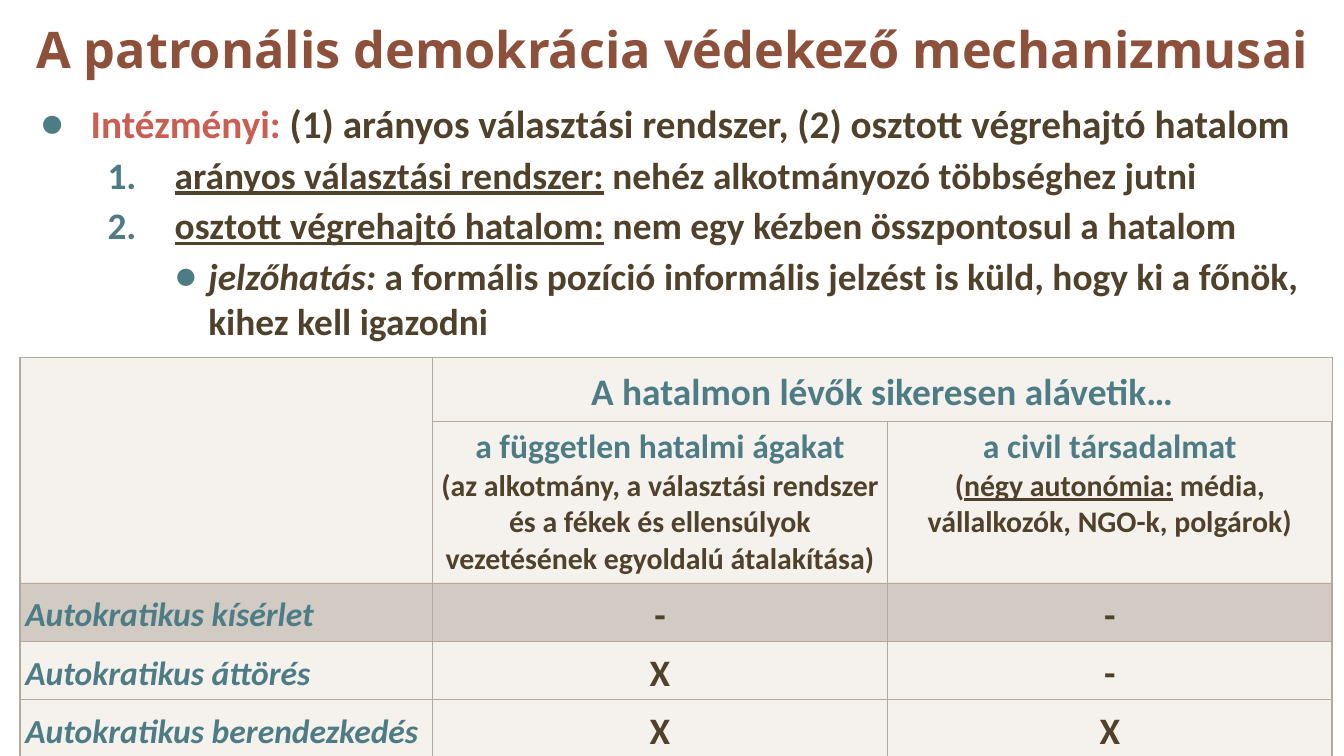
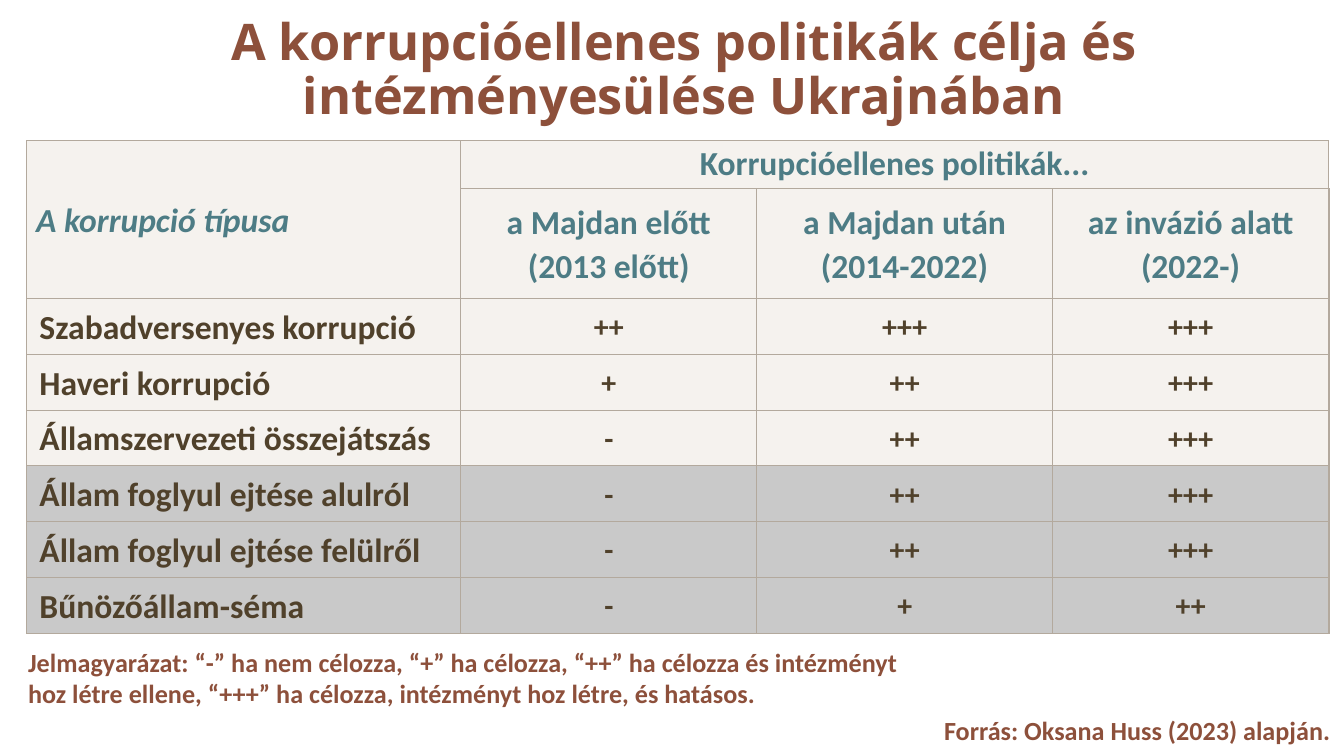
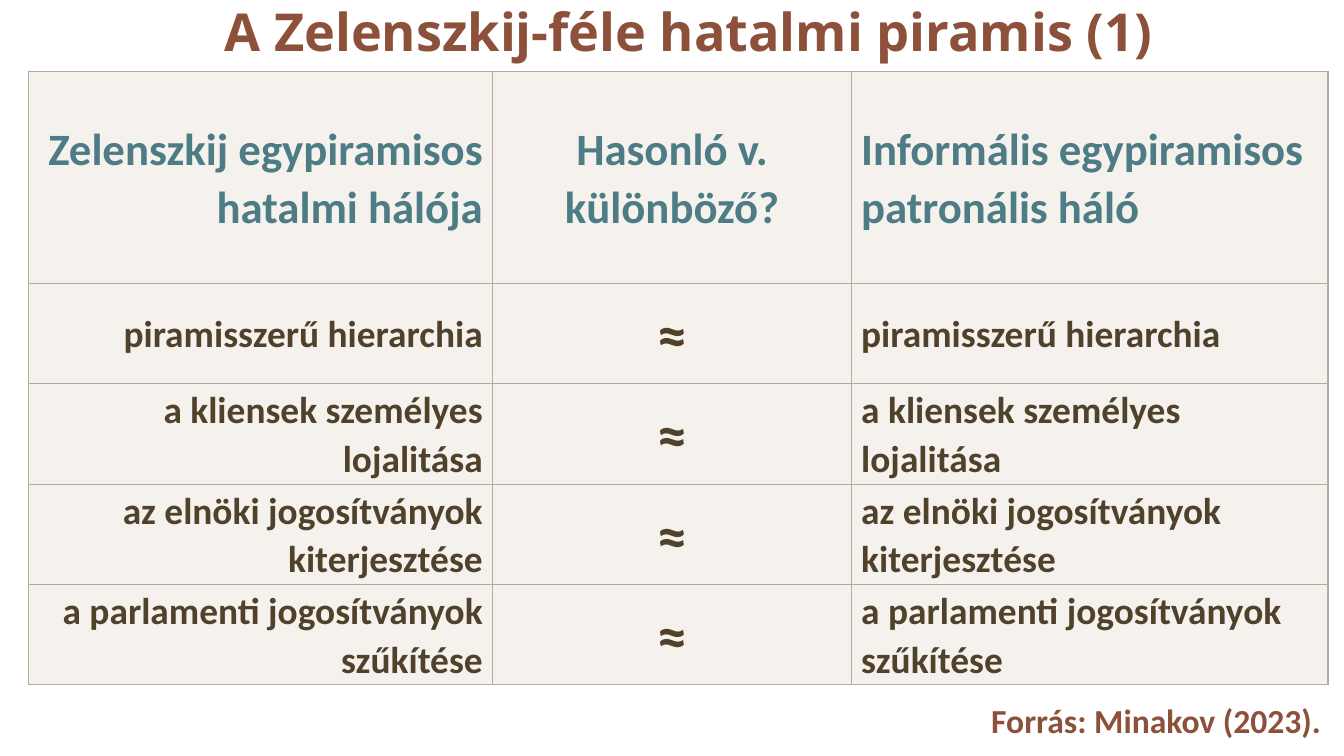
import dataclasses

import lxml.etree
import pptx
import pptx.dml.color
import pptx.enum.text
import pptx.oxml.ns
import pptx.util

Pt = pptx.util.Pt
ALIGN = pptx.enum.text.PP_ALIGN
ANCHOR = pptx.enum.text.MSO_ANCHOR
LEFT, CENTER, RIGHT = ALIGN.LEFT, ALIGN.CENTER, ALIGN.RIGHT


@dataclasses.dataclass(frozen=True)
class Theme:
    # Colours
    title: str = "8D503B"
    heading: str = "4D7C85"
    accent: str = "CA5E53"
    text: str = "50412B"
    border: str = "B3A99D"
    cell: str = "EFEAE4"
    gray: str = "A6A6A6"
    opacity: int = 60
    # Fonts and type sizes
    title_font: str = "Open Sans"
    body_font: str = "Calibri"
    title_size: int = 27
    large_title: int = 28
    lead: int = 21
    large: int = 20
    medium: int = 18
    small: int = 16
    caption: int = 14
    column_head: int = 24
    symbol: int = 32


THEME = Theme()


@dataclasses.dataclass
class Run:
    text: str
    size: float = THEME.medium
    color: str = THEME.text
    italic: bool = False
    underline: bool = False
    font: str = THEME.body_font


@dataclasses.dataclass
class Cell:
    """Paragraphs of runs with the layout of one table cell."""
    paragraphs: list
    align: int = CENTER
    anchor: int = ANCHOR.MIDDLE
    margins: tuple = (3, 3)
    line_spacing: float = 1.0


def add_element(parent, tag, **attributes):
    return lxml.etree.SubElement(parent, pptx.oxml.ns.qn(tag), attributes)


class Deck:
    def __init__(self, theme):
        self.theme = theme
        self.presentation = pptx.Presentation()
        self.presentation.slide_width = Pt(720)
        self.presentation.slide_height = Pt(405)
        self.slide = None

    def add_slide(self, title, box, size=None, layout=5):
        layouts = self.presentation.slide_layouts
        self.slide = self.presentation.slides.add_slide(layouts[layout])
        run = Run(title, size or self.theme.title_size, self.theme.title,
                  font=self.theme.title_font)
        frame = self.place(self.slide.shapes.title, box, ANCHOR.MIDDLE)
        self.add_runs(frame.paragraphs[0], [run], CENTER, 0.9)

    def place(self, shape, box, anchor=ANCHOR.TOP):
        shape.left, shape.top, shape.width, shape.height = map(Pt, box)
        frame = shape.text_frame
        frame.word_wrap = True
        frame.auto_size = pptx.enum.text.MSO_AUTO_SIZE.NONE
        frame.vertical_anchor = anchor
        return frame

    def add_runs(self, paragraph, runs, align=LEFT, line_spacing=1.0):
        paragraph.alignment = align
        paragraph.line_spacing = line_spacing
        paragraph.space_before = Pt(0)
        for item in runs:
            for index, line in enumerate(item.text.split("\n")):
                if index:
                    paragraph.add_line_break()
                run = paragraph.add_run()
                run.text = line
                font = run.font
                font.name, font.size, font.bold = item.font, Pt(item.size), True
                font.italic, font.underline = item.italic, item.underline
                font.color.rgb = pptx.dml.color.RGBColor.from_string(item.color)

    def paragraphs(self, frame, count):
        return [frame.paragraphs[0]] + [frame.add_paragraph() for _ in range(count - 1)]

    def add_list(self, box, items):
        """Each item: level, indent, hanging, number (None for a dot), runs."""
        frame = self.place(self.slide.placeholders[1], box)
        for paragraph, item in zip(self.paragraphs(frame, len(items)), items):
            level, indent, hanging, number, runs = item
            paragraph.level = level
            self.add_runs(paragraph, runs)
            paragraph.space_after = Pt(3)
            properties = paragraph._p.get_or_add_pPr()
            properties.set("marL", str(Pt(indent)))
            properties.set("indent", str(-Pt(hanging)))
            color = add_element(properties, "a:buClr")
            add_element(color, "a:srgbClr", val=self.theme.heading)
            add_element(properties, "a:buFont", typeface=self.theme.body_font)
            if number is None:
                add_element(properties, "a:buChar", char="●")
            else:
                add_element(properties, "a:buAutoNum", type="arabicPeriod", startAt=str(number))

    def add_caption(self, box, text, align=LEFT, size=None):
        frame = self.place(self.slide.shapes.add_textbox(*map(Pt, box)), box)
        run = Run(text, size or self.theme.caption, self.theme.title)
        self.add_runs(frame.paragraphs[0], [run], align)

    def add_table(self, left, top, widths, heights, rows, merges=(), fills=None, thick="R"):
        """fills maps row numbers to colours; thick names the heavy outer sides."""
        table = self.slide.shapes.add_table(
            len(heights), len(widths), Pt(left), Pt(top),
            Pt(sum(widths)), Pt(sum(heights))).table
        table.first_row = table.horz_banding = False
        for column, width in zip(table.columns, widths):
            column.width = Pt(width)
        for row, height in zip(table.rows, heights):
            row.height = Pt(height)
        last_row, last_column = len(heights) - 1, len(widths) - 1
        for r, row in enumerate(rows):
            for c, content in enumerate(row):
                cell = table.cell(r, c)
                if content:
                    self.fill_cell(cell, content)
                outer = {"L": c == 0, "R": c == last_column, "T": r == 0, "B": r == last_row}
                heavy = [side for side in thick if outer[side]]
                self.paint_cell(cell, (fills or {}).get(r, self.theme.cell), heavy)
        for first, last in merges:
            table.cell(*first).merge(table.cell(*last))

    def fill_cell(self, cell, content):
        cell.vertical_anchor = content.anchor
        horizontal, vertical = content.margins
        cell.margin_left = cell.margin_right = Pt(horizontal)
        cell.margin_top = cell.margin_bottom = Pt(vertical)
        paragraphs = self.paragraphs(cell.text_frame, len(content.paragraphs))
        for paragraph, runs in zip(paragraphs, content.paragraphs):
            self.add_runs(paragraph, runs, content.align, content.line_spacing)

    def paint_cell(self, cell, color, heavy):
        cell.fill.solid()
        cell.fill.fore_color.rgb = pptx.dml.color.RGBColor.from_string(color)
        properties = cell._tc.get_or_add_tcPr()
        fill_color = properties.find(".//" + pptx.oxml.ns.qn("a:srgbClr"))
        add_element(fill_color, "a:alpha", val=str(self.theme.opacity * 1000))
        for index, side in enumerate("LRTB"):
            width = Pt(1 if side in heavy else 0.5)
            line = add_element(properties, "a:ln" + side, w=str(width))
            add_element(add_element(line, "a:solidFill"), "a:srgbClr", val=self.theme.border)
            properties.insert(index, line)


def defence_slide(deck):
    theme = deck.theme
    deck.add_slide("A patronális demokrácia védekező mechanizmusai",
                   (8.6, 0, 703, 55.4), layout=1)

    # Institutional defences
    size = theme.large
    deck.add_list((14.4, 49.7, 698, 142), [
        (0, 27, 27, None, [
            Run("Intézményi:", theme.lead, theme.accent),
            Run(" (1) arányos választási rendszer, (2) osztott végrehajtó hatalom", theme.lead)]),
        (1, 72, 36, 1, [
            Run("arányos választási rendszer:", size, underline=True),
            Run(" nehéz alkotmányozó többséghez jutni", size)]),
        (1, 72, 36, 2, [
            Run("osztott végrehajtó hatalom:", size, underline=True),
            Run(" nem egy kézben összpontosul a hatalom", size)]),
        (2, 90, 18, None, [
            Run("jelzőhatás:", size, italic=True),
            Run(" a formális pozíció informális jelzést is küld, hogy ki a főnök, "
                "kihez kell igazodni", size)]),
    ])

    # Stages of autocratic change
    def branch(heading, runs):
        return Cell([[Run(heading, color=theme.heading)], runs], anchor=ANCHOR.TOP)

    rows = [
        [None, Cell([[Run("A hatalmon lévők sikeresen alávetik…", size, theme.heading)]],
                    line_spacing=1.15), None],
        [None,
         branch("a független hatalmi ágakat", [
             Run("(az alkotmány, a választási rendszer és a fékek és ellensúlyok "
                 "vezetésének egyoldalú átalakítása)", theme.small)]),
         branch("a civil társadalmat", [
             Run("(", theme.small),
             Run("négy autonómia:", theme.small, underline=True),
             Run(" média, vállalkozók, NGO-k, polgárok)", theme.small)])],
    ]
    for stage, marks in (("kísérlet", "--"), ("áttörés", "X-"), ("berendezkedés", "XX")):
        label = Run("Autokratikus " + stage, color=theme.heading, italic=True)
        rows.append([Cell([[label]], LEFT, line_spacing=1.15)] + [
            Cell([[Run(mark, size)]], margins=(5, 0), line_spacing=1.15) for mark in marks])
    deck.add_table(10.6, 191.5, (221, 244, 238), (34.2, 86.4, 30.8, 30.8, 30.8), rows,
                   merges=[((0, 0), (1, 0)), ((0, 1), (0, 2))],
                   fills={2: theme.border}, thick="LRTB")


def policy_slide(deck):
    theme = deck.theme
    deck.add_slide("A korrupcióellenes politikák célja és intézményesülése Ukrajnában",
                   (15, 4.3, 703, 67.7))

    # Targets by type of corruption and period
    def cell(paragraphs, align=CENTER):
        return Cell(paragraphs, align, margins=(6.75, 3), line_spacing=1.07)

    def header(*lines):
        return cell([[Run(line, color=theme.heading)] for line in lines])

    corner = header("A korrupció típusa")
    corner.paragraphs[0][0].italic = True
    corner.align, corner.margins = LEFT, (5, 0)
    top = header("Korrupcióellenes politikák...")
    top.anchor, top.margins = ANCHOR.TOP, (5, 0)
    rows = [
        [corner, top, None, None],
        [None, header("a Majdan előtt\n(2013 előtt)"), header("a Majdan után\n(2014-2022)"),
         header("az invázió alatt", "(2022-)")],
    ]
    for kind, marks in (
        ("Szabadversenyes korrupció", ("++", "+++", "+++")),
        ("Haveri korrupció", ("+", "++", "+++")),
        ("Államszervezeti összejátszás", ("-", "++", "+++")),
        ("Állam foglyul ejtése alulról", ("-", "++", "+++")),
        ("Állam foglyul ejtése felülről", ("-", "++", "+++")),
        ("Bűnözőállam-séma", ("-", "+", "++")),
    ):
        rows.append([cell([[Run(kind)]], LEFT)]
                    + [cell([[Run(mark, theme.small)]]) for mark in marks])
    deck.add_table(14.4, 75.4, (232.5, 158.5, 158.5, 148), [25.6, 59] + [29.85] * 6, rows,
                   merges=[((0, 0), (1, 0)), ((0, 1), (0, 3))],
                   fills=dict.fromkeys((5, 6, 7), theme.gray))

    # Source and legend
    deck.add_caption((427.7, 379.4, 292.3, 24.5), "Forrás: Oksana Huss (2023) alapján.", RIGHT)
    deck.add_caption((8, 342.7, 488, 41),
                     "Jelmagyarázat: “-” ha nem célozza, “+” ha célozza, “++” ha célozza és "
                     "intézményt hoz létre ellene, “+++” ha célozza, intézményt hoz létre, "
                     "és hatásos.")


def pyramid_slide(deck):
    theme = deck.theme
    deck.add_slide("A Zelenszkij-féle hatalmi piramis (1)", (17.3, 4.3, 702.7, 28),
                   theme.large_title)

    # Comparison of the two networks
    def row(texts, sizes, color):
        return [Cell([[Run(text, size, color)]], align, margins=(5, 0), line_spacing=1.07)
                for text, size, align in zip(texts, sizes, (RIGHT, CENTER, LEFT))]

    rows = [row(("Zelenszkij egypiramisos\nhatalmi hálója", "Hasonló v. különböző?",
                 "Informális egypiramisos\npatronális háló"),
                [theme.column_head] * 3, theme.heading)]
    for feature in ("piramisszerű hierarchia", "a kliensek személyes lojalitása",
                    "az elnöki jogosítványok kiterjesztése",
                    "a parlamenti jogosítványok szűkítése"):
        rows.append(row((feature, "≈", feature),
                        (theme.large, theme.symbol, theme.large), theme.text))
    deck.add_table(15.2, 38.2, (248.5, 192.7, 255), [113.6] + [53.75] * 4, rows)

    # Source
    deck.add_caption((422.6, 371.5, 292.3, 29), "Forrás: Minakov (2023).", RIGHT, theme.medium)


def main():
    deck = Deck(THEME)
    defence_slide(deck)
    policy_slide(deck)
    pyramid_slide(deck)
    deck.presentation.save("out.pptx")


if __name__ == "__main__":
    main()
